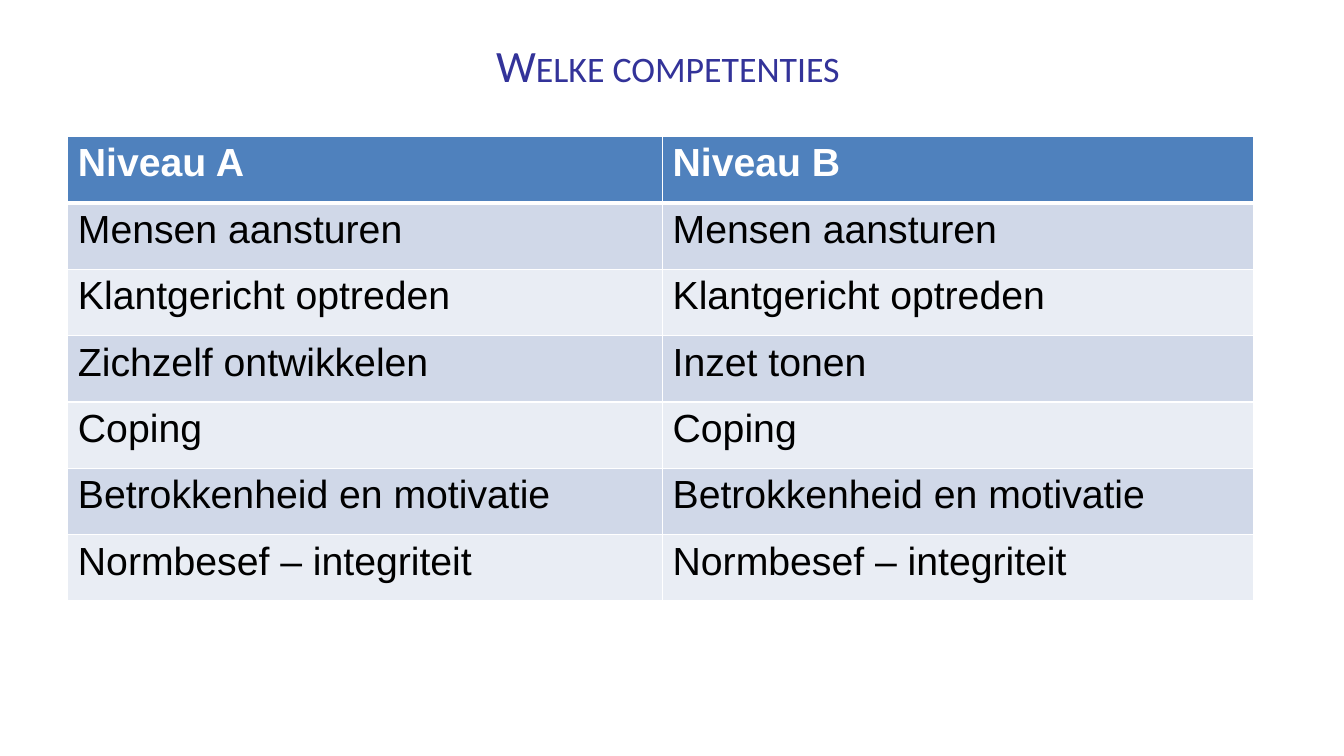
from lxml import etree
from pptx import Presentation, util as u
from pptx.dml.color import RGBColor
from pptx.enum import text as t
from pptx.oxml import ns

HUES = {"title": "333399", "head": "4F81BD", "odd": "D0D8E8",
        "even": "E9EDF4", "white": "FFFFFF", "black": "000000"}
ROWS = [
    ("Niveau A", "Niveau B"),
    ("Mensen aansturen", "Mensen aansturen"),
    ("Klantgericht optreden", "Klantgericht optreden"),
    ("Zichzelf ontwikkelen", "Inzet tonen"),
    ("Coping", "Coping"),
    ("Betrokkenheid en motivatie", "Betrokkenheid en motivatie"),
    ("Normbesef – integriteit", "Normbesef – integriteit"),
]


def write(frame, words, font="Arial", size=28, hue="black", bold=False,
          align=t.PP_ALIGN.LEFT, caps=False):
    para = frame.paragraphs[0]
    para.alignment = align
    run = para.add_run()
    run.text = words
    run.font.name = font
    run.font.size = u.Pt(size)
    run.font.bold = bold
    run.font.color.rgb = RGBColor.from_string(HUES[hue])
    if caps:
        run._r.get_or_add_rPr().set("cap", "small")


class Deck:
    """Holds the style and the current slide."""

    def __init__(self, wide, high):
        self.show = Presentation()
        self.show.slide_width = u.Pt(wide)
        self.show.slide_height = u.Pt(high)
        self.slide = self.show.slides.add_slide(self.show.slide_layouts[6])

    def title(self, words, *box):
        frame = self.slide.shapes.add_textbox(*map(u.Pt, box)).text_frame
        frame.word_wrap = True
        frame.margin_top = u.Pt(5.5)
        frame.vertical_anchor = t.MSO_ANCHOR.TOP
        write(frame, words, font="Calibri", size=32, hue="title",
              align=t.PP_ALIGN.CENTER, caps=True)

    def border(self, cell, side, width):
        props = cell._tc.get_or_add_tcPr()
        line = etree.SubElement(props, ns.qn(f"a:ln{side}"), w=str(u.Pt(width)))
        fill = etree.SubElement(line, ns.qn("a:solidFill"))
        etree.SubElement(fill, ns.qn("a:srgbClr"), val=HUES["white"])

    def table(self, rows, left, top, cols, high):
        box = map(u.Pt, (left, top, sum(cols), high * len(rows)))
        grid = self.slide.shapes.add_table(len(rows), len(cols), *box).table
        for col, wide in zip(grid.columns, cols):
            col.width = u.Pt(wide)
        for i, row in enumerate(rows):
            grid.rows[i].height = u.Pt(high)
            head = i == 0
            tint = "head" if head else "odd" if i % 2 else "even"
            for j, words in enumerate(row):
                cell = grid.cell(i, j)
                for side in "LRTB":
                    thick = (i, side) in ((0, "B"), (1, "T"))
                    self.border(cell, side, 3 if thick else 1)
                cell.fill.solid()
                cell.fill.fore_color.rgb = RGBColor.from_string(HUES[tint])
                write(cell.text_frame, words, bold=head,
                      hue="white" if head else "black")


def main():
    deck = Deck(960, 540)
    deck.title("Welke competenties ", 48, 21.6, 864, 90)
    deck.table(ROWS, 48.5, 97.5, (424.8, 421.9), 47.4)
    deck.show.save("out.pptx")


if __name__ == "__main__":
    main()
